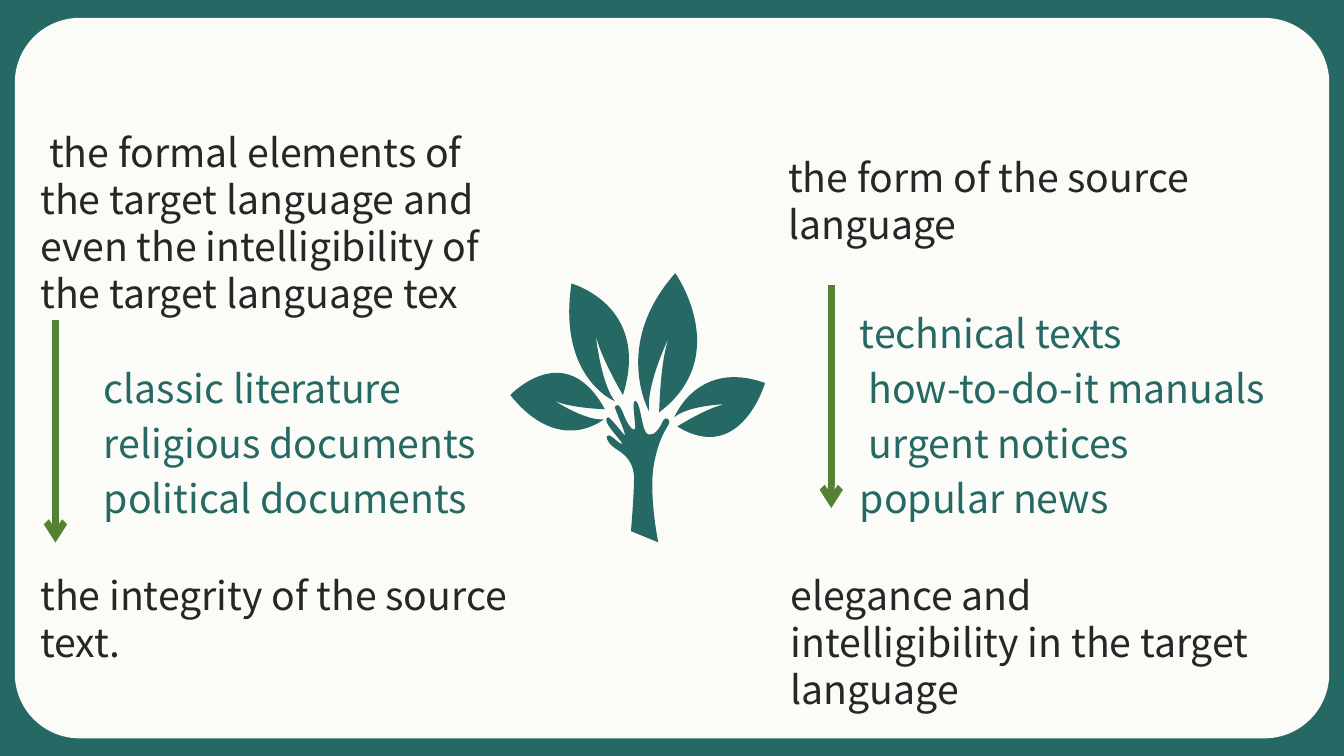
from dataclasses import dataclass
from typing import Any, NamedTuple

from pptx import Presentation
from pptx.dml.color import RGBColor as Rgb
from pptx.enum.shapes import MSO_CONNECTOR as Link, MSO_SHAPE as Form
from pptx.enum.text import MSO_ANCHOR as Anchor, MSO_AUTO_SIZE as Fit
from pptx.oxml.ns import qn
from pptx.oxml.xmlchemy import OxmlElement as Node
from pptx.util import Pt

Point = tuple[float, float]


@dataclass(frozen=True)
class Theme:
    green: Rgb = Rgb.from_string("256864")
    cream: Rgb = Rgb.from_string("FBFCF7")
    ink: Rgb = Rgb.from_string("262626")
    moss: Rgb = Rgb.from_string("548235")
    font: str = "Noto Sans CJK JP"
    size: float = 28
    line: float = 33.6
    gap: float = 5.6
    width: float = 337
    stroke: float = 4.75


class Panel(NamedTuple):
    form: Form
    left: float
    top: float
    width: float
    height: float
    fill: Rgb


class Note(NamedTuple):
    left: float
    top: float
    height: float
    color: Rgb
    lines: tuple[str, ...]


class Arrow(NamedTuple):
    left: float
    top: float
    drop: float


class Outline(NamedTuple):
    start: Point
    knots: list[Point]
    close: bool


def leaf(start: Point, *arcs: tuple[Point, Point]) -> Outline:
    """Return a leaf whose arcs each leave straight from their first point."""
    knots, last = [], start
    for bend, end in arcs:
        knots += [last, bend, end]
        last = end
    return Outline(start, knots, True)


THEME = Theme()
PANELS = [
    Panel(Form.RECTANGLE, 0, 0, 960, 540, THEME.green),
    Panel(Form.ROUNDED_RECTANGLE, 10.6, 12.8, 938.9, 514.6, THEME.cream),
]
TRUNK = Outline((470.2, 387.4), [
    (470.2, 387.4), (463, 352.1), (467.3, 330.5),
    (471.6, 308.2), (478.8, 303.8), (478.1, 301),
    (477.4, 297.4), (473.8, 298.8), (473, 301.7),
    (471.6, 305.3), (467.3, 311.8), (463, 310.3),
    (458.6, 309.6), (457.9, 288.7), (454.3, 286.6),
    (451.4, 285.1), (452.9, 294.5), (453.6, 302.4),
    (455, 311), (449.3, 306), (445.7, 296.6),
    (442.1, 286.6), (439.9, 289.4), (439.2, 290.9),
    (439.2, 292.3), (447.1, 309.6), (446.4, 311),
    (446.4, 311.8), (435.6, 297.4), (434.2, 298.1),
    (433.4, 298.1), (432, 298.8), (434.2, 303.1),
    (437, 308.2), (445, 316.1), (444.2, 316.8),
    (443.5, 318.2), (437, 311), (434.9, 311),
    (432, 311), (433.4, 315.4), (437.8, 319),
    (442.1, 322.6), (452.2, 326.2), (452.9, 340.6),
    (452.9, 354.2), (450.7, 379.4), (450.7, 379.4),
], False)
TREE = [
    TRUNK,
    leaf((463.7, 293.8), ((437, 246.2), (482.4, 195.1)),
         ((524.2, 254.2), (470.9, 294.5)), ((471.6, 256.3), (478.1, 240.5)),
         ((461.5, 274.3), (463.7, 293.8))),
    leaf((481.7, 298.1), ((498.2, 256.3), (546.5, 273.6)),
         ((529.2, 332.6), (483.8, 304.6)), ((506.9, 290.2), (518.4, 288.7)),
         ((491.8, 289.4), (481.7, 298.1))),
    leaf((431.3, 299.5), ((399.6, 326.2), (364.5, 282.2)),
         ((403.9, 240.5), (432, 292.3)), ((406.1, 291.6), (395.3, 285.8)),
         ((418.3, 301), (431.3, 299.5))),
    leaf((439.2, 286.6), ((398.2, 270), (408.2, 202.5)),
         ((465.1, 218.2), (445, 282.2)), ((428.4, 254.2), (425.5, 239)),
         ((429.1, 273.6), (439.2, 286.6))),
]
NOTES = [
    Note(28.8, 91.4, 135.4, THEME.ink, (
        " the formal elements of the target language and even the "
        "intelligibility of the target language tex",)),
    Note(28.8, 408.2, 67.7, THEME.ink, ("the integrity of the source text.",)),
    Note(74.2, 260.2, 115.2, THEME.green, (
        "classic literature", "religious documents", "political documents")),
    Note(563, 109.4, 67.7, THEME.ink, ("the form of the source language",)),
    Note(564.9, 408.2, 67.7, THEME.ink, (
        "elegance and intelligibility in the target language",)),
    Note(614.2, 221.3, 156.2, THEME.green, (
        "technical texts", " how-to-do-it manuals", " urgent notices",
        "popular news")),
]
ARROWS = [Arrow(39.6, 228.5, 159.1), Arrow(593.8, 203.8, 159.1)]


def apply(item: Any, style: dict[str, Any]) -> None:
    """Set each named value of a style on an item."""
    for name, value in style.items():
        setattr(item, name, value)


def paint(shape: Any, color: Rgb) -> None:
    """Fill a shape plainly, with no outline or shadow."""
    shape.shadow.inherit = False
    shape.fill.solid()
    shape.fill.fore_color.rgb = color
    shape.line.fill.background()


def bend(shape: Any) -> None:
    """Turn every three line segments of a freeform into one cubic curve."""
    lines = list(shape._element.iter(qn("a:lnTo")))
    for n in range(0, len(lines), 3):
        curve = Node("a:cubicBezTo")
        lines[n].addprevious(curve)
        for line in lines[n:n + 3]:
            curve.append(line[0])
            line.getparent().remove(line)


def draw_panel(shapes: Any, panel: Panel) -> None:
    """Draw one background panel."""
    box = map(Pt, (panel.left, panel.top, panel.width, panel.height))
    shape = shapes.add_shape(panel.form, *box)
    if panel.form == Form.ROUNDED_RECTANGLE:
        shape.adjustments[0] = 0.09
    paint(shape, panel.fill)


def draw_part(shapes: Any, part: Outline) -> None:
    """Draw one curved part of the tree."""
    pen = shapes.build_freeform(*map(Pt, part.start), scale=1.0)
    spots = [(Pt(x), Pt(y)) for x, y in part.knots]
    pen.add_line_segments(spots, close=part.close)
    shape = pen.convert_to_shape()
    bend(shape)
    paint(shape, THEME.green)


def draw_note(shapes: Any, note: Note) -> None:
    """Draw one text box with a paragraph for each line."""
    box = map(Pt, (note.left, note.top, THEME.width, note.height))
    frame = shapes.add_textbox(*box).text_frame
    sides = ("left", "top", "right", "bottom")
    apply(frame, {f"margin_{side}": Pt(0) for side in sides} | {
        "word_wrap": True, "vertical_anchor": Anchor.TOP,
        "auto_size": Fit.SHAPE_TO_FIT_TEXT, "text": "\n".join(note.lines)})
    for para in frame.paragraphs:
        apply(para, {"space_before": Pt(THEME.gap),
                     "line_spacing": Pt(THEME.line)})
        for run in para.runs:
            apply(run.font, {"name": THEME.font, "size": Pt(THEME.size)})
            run.font.color.rgb = note.color


def draw_arrow(shapes: Any, arrow: Arrow) -> None:
    """Draw one arrow pointing down."""
    ends = (arrow.left, arrow.top, arrow.left, arrow.top + arrow.drop)
    link = shapes.add_connector(Link.STRAIGHT, *map(Pt, ends))
    link.line.width = Pt(THEME.stroke)
    link.line.color.rgb = THEME.moss
    head = Node("a:tailEnd")
    head.set("type", "arrow")
    link.line._get_or_add_ln().append(head)
    link._element.spPr.append(Node("a:effectLst"))


def main() -> None:
    """Build the slide and save it."""
    deck = Presentation()
    apply(deck, {"slide_width": Pt(960), "slide_height": Pt(540)})
    shapes = deck.slides.add_slide(deck.slide_layouts[6]).shapes
    for panel in PANELS:
        draw_panel(shapes, panel)
    tree = shapes.add_group_shape().shapes
    for part in TREE:
        draw_part(tree, part)
    for note in NOTES:
        draw_note(shapes, note)
    for arrow in ARROWS:
        draw_arrow(shapes, arrow)
    deck.save("out.pptx")


if __name__ == "__main__":
    main()
